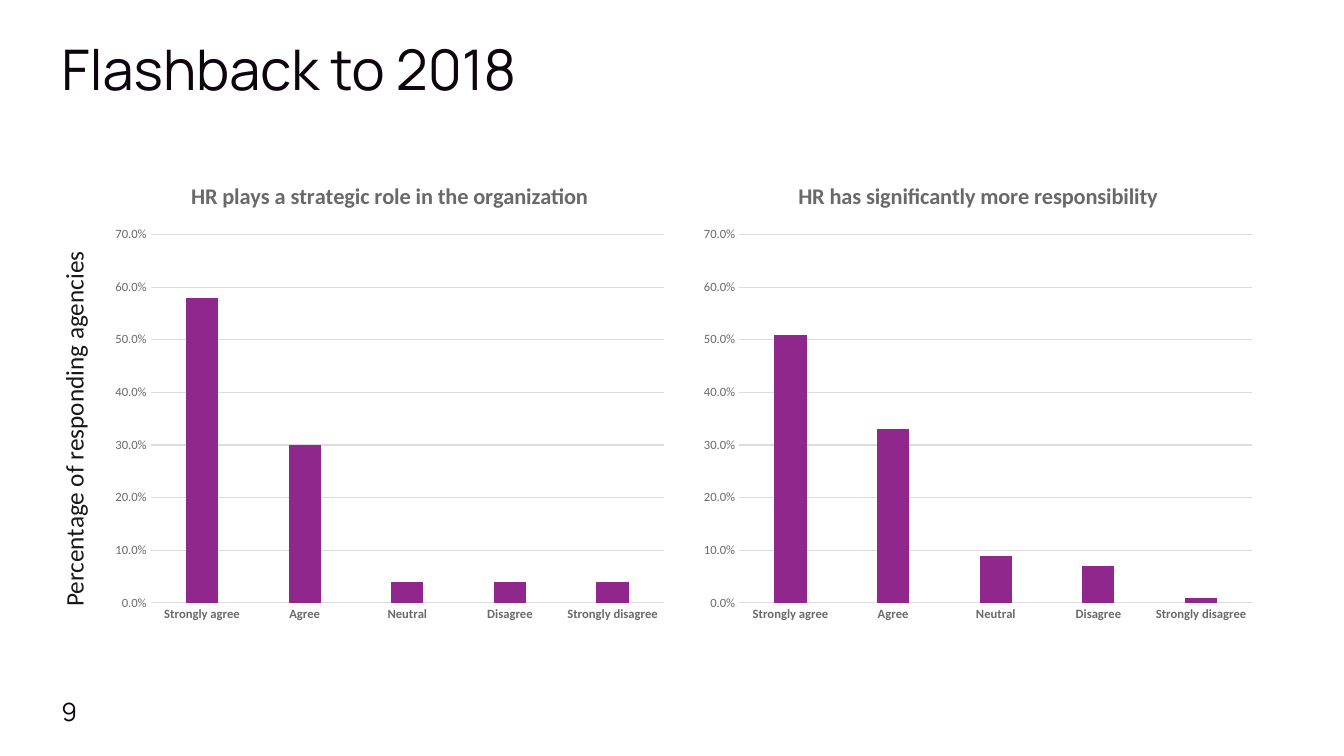
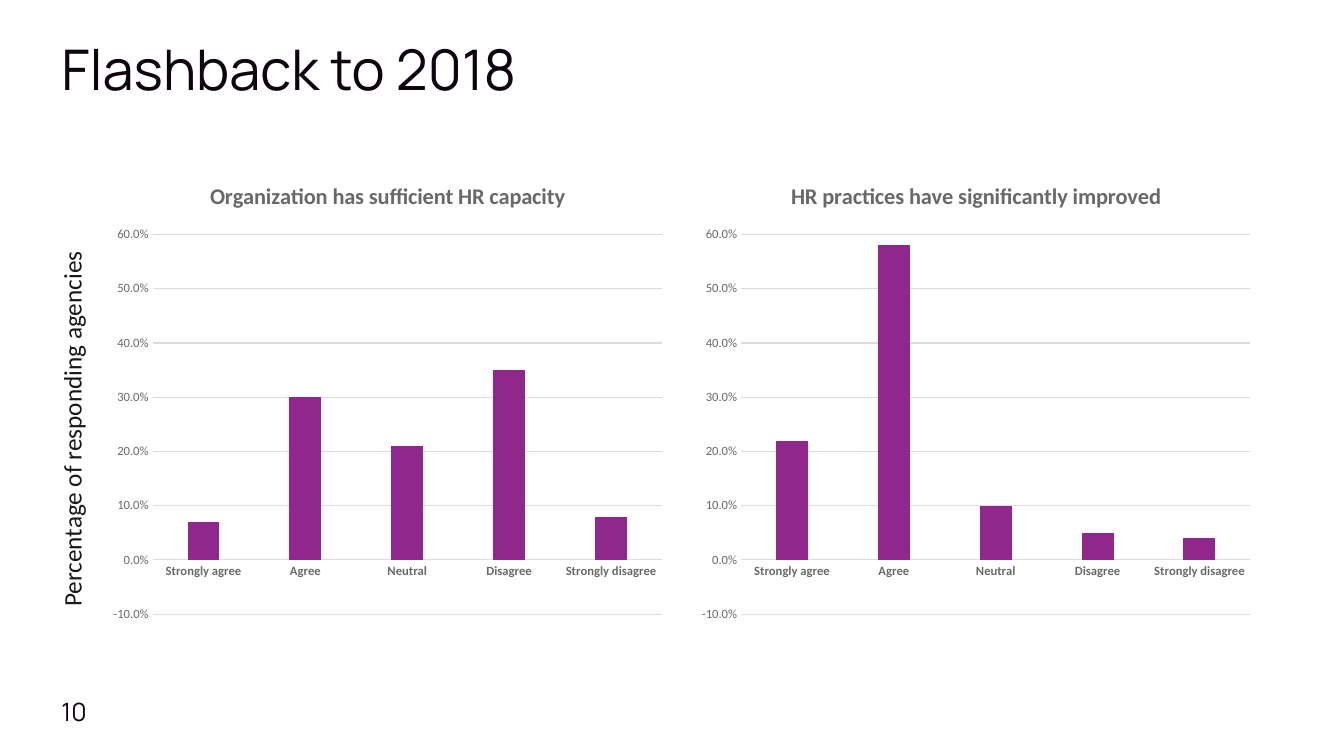
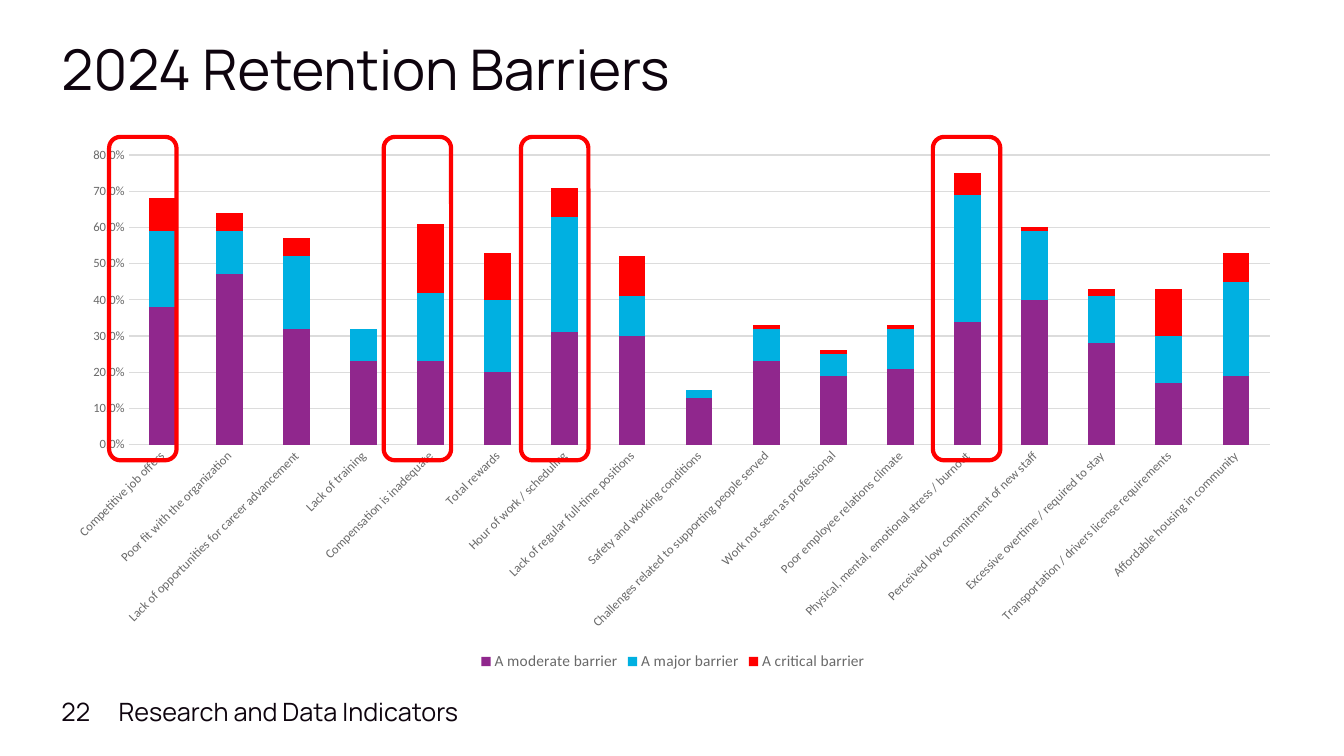
from dataclasses import dataclass

from pptx import Presentation
from pptx.chart.data import CategoryChartData
from pptx.dml.color import RGBColor
from pptx.enum.chart import XL_CHART_TYPE, XL_LEGEND_POSITION, XL_TICK_MARK
from pptx.enum.shapes import MSO_SHAPE
from pptx.enum.text import MSO_ANCHOR, MSO_AUTO_SIZE
from pptx.util import Cm, Pt

CLUSTERED = XL_CHART_TYPE.COLUMN_CLUSTERED
STACKED = XL_CHART_TYPE.COLUMN_STACKED
LEGEND_BOTTOM = XL_LEGEND_POSITION.BOTTOM
NO_TICK = XL_TICK_MARK.NONE
ROUND_RECT = MSO_SHAPE.ROUNDED_RECTANGLE
TOP, MIDDLE = MSO_ANCHOR.TOP, MSO_ANCHOR.MIDDLE
GROW = MSO_AUTO_SIZE.SHAPE_TO_FIT_TEXT


@dataclass(frozen=True)
class Theme:
    head_font: str = "Manrope"
    body_font: str = "Calibri"
    ink: str = "0E040E"
    text: str = "181818"
    muted: str = "696969"
    grid: str = "DCDCDC"
    purple: str = "90278D"
    blue: str = "00B0E1"
    red: str = "FF0000"
    title_size: int = 40
    text_size: int = 18
    chart_title_size: int = 16
    legend_size: int = 11
    chart_size: int = 10
    axis_size: int = 9


T = Theme()

# Box: left, top, width, height in centimetres
SLIDE_W, SLIDE_H = 33.87, 19.05
TITLE_BOX = (1.3, 1.02, 31.32, 1.55)
NUMBER_BOX = (1.3, 17.42, 1.42, 1.02)
FOOTER_BOX = (2.74, 17.42, 9.32, 1.02)
PAIR_BOX_2018 = (1.35, 4.09, 30.5, 11.81)
PAIR_BOX_CAPACITY = (1.3, 4.09, 30.5, 11.81)
BARRIER_BOX = (1.3, 3.45, 31.32, 13.56)

AGREEMENT = ["Strongly agree", "Agree", "Neutral", "Disagree", "Strongly disagree"]
ROLE_CHARTS = [
    ("HR plays a strategic role in the organization", [0.58, 0.3, 0.04, 0.04, 0.04]),
    ("HR has significantly more responsibility", [0.51, 0.33, 0.09, 0.07, 0.01]),
]
CAPACITY_CHARTS = [
    ("Organization has sufficient HR capacity", [0.07, 0.3, 0.21, 0.35, 0.08]),
    ("HR practices have significantly improved", [0.22, 0.58, 0.1, 0.05, 0.04]),
]
BARRIERS = [  # name, moderate, major, critical
    ("Competitive job offers", 0.38, 0.21, 0.09),
    ("Poor fit with the organization", 0.47, 0.12, 0.05),
    ("Lack of opportunities for career advancement", 0.32, 0.2, 0.05),
    ("Lack of training", 0.23, 0.09, 0),
    ("Compensation is inadequate", 0.23, 0.19, 0.19),
    ("Total rewards", 0.2, 0.2, 0.13),
    ("Hour of work / scheduling", 0.31, 0.32, 0.08),
    ("Lack of regular full-time positions", 0.3, 0.11, 0.11),
    ("Safety and working conditions", 0.13, 0.02, 0),
    ("Challenges related to supporting people served", 0.23, 0.09, 0.01),
    ("Work not seen as professional", 0.19, 0.06, 0.01),
    ("Poor employee relations climate", 0.21, 0.11, 0.01),
    ("Physical, mental, emotional stress / burnout", 0.34, 0.35, 0.06),
    ("Perceived low commitment of new staff", 0.4, 0.19, 0.01),
    ("Excessive overtime / required to stay", 0.28, 0.13, 0.02),
    ("Transportation / drivers license requirements", 0.17, 0.13, 0.13),
    ("Affordable housing in community", 0.19, 0.26, 0.08),
]
HIGHLIGHTED = [0, 4, 6, 12]  # barriers that get a frame


def rgb(value):
    return RGBColor.from_string(value)


def lengths(box):
    return [Cm(v) for v in box]


def style_font(font, size, color, name=T.body_font, bold=False):
    font.size = Pt(size)
    font.name = name
    font.bold = bold
    font.color.rgb = rgb(color)


def add_text(s, box, text, size, color, name, anchor=TOP):
    tf = s.shapes.add_textbox(*lengths(box)).text_frame
    tf.word_wrap = True
    tf.vertical_anchor = anchor
    tf.text = text
    style_font(tf.paragraphs[0].runs[0].font, size, color, name)
    return tf


def add_base_slide(prs, title, number, footer=None):
    """Blank slide with the shared title, page number and footer."""
    s = prs.slides.add_slide(prs.slide_layouts[6])
    tf = add_text(s, TITLE_BOX, title, T.title_size, T.ink, T.head_font)
    tf.margin_top = Cm(0.05)
    tf.paragraphs[0].line_spacing = 0.9
    for box, text in ((NUMBER_BOX, str(number)), (FOOTER_BOX, footer)):
        if text:
            add_text(s, box, text, T.text_size, T.ink, T.head_font, MIDDLE)
    return s


def style_axes(chart, low, high, bold):
    cat, val = chart.category_axis, chart.value_axis
    for axis in (cat, val):
        axis.major_tick_mark = axis.minor_tick_mark = NO_TICK
        style_font(axis.tick_labels.font, T.axis_size, T.muted, bold=bold and axis is cat)
    val.minimum_scale, val.maximum_scale, val.major_unit = low, high, 0.1
    val.tick_labels.number_format = "0.0%"
    val.tick_labels.number_format_is_linked = False
    val.has_major_gridlines = True
    val.format.line.fill.background()
    for line in (cat.format.line, val.major_gridlines.format.line):
        line.color.rgb = rgb(T.grid)
        line.width = Pt(0.75)


def add_columns(s, box, kind, cats, series, low, high, gap, overlap, bold=False):
    """Column chart; series holds (name, values, colour) rows."""
    data = CategoryChartData(number_format="0.0%")
    data.categories = cats
    for name, values, _ in series:
        data.add_series(name, values)
    chart = s.shapes.add_chart(kind, *lengths(box), data).chart
    style_font(chart.font, T.chart_size, T.text)
    chart.has_title = chart.has_legend = False
    style_axes(chart, low, high, bold)
    plot = chart.plots[0]
    plot.vary_by_categories = False
    plot.gap_width, plot.overlap = gap, overlap
    for ser, (_, _, color) in zip(plot.series, series):
        ser.invert_if_negative = False
        ser.format.fill.solid()
        ser.format.fill.fore_color.rgb = rgb(color)
    return chart


def add_chart_pair(s, box, charts, low, high):
    """Upright axis label followed by two titled charts of equal width."""
    left, top, width, height = box
    label_w, gap = 1.27, 0.43
    chart_w = (width - label_w - gap) / 2

    # Axis label
    tf = add_text(s, (left, top + 2.13, label_w, 9.32), "Percentage of responding agencies",
                  T.text_size, T.text, T.body_font)
    tf.word_wrap = False
    tf.auto_size = GROW
    tf._txBody.bodyPr.set("vert", "vert270")

    # Charts
    for i, (title, values) in enumerate(charts):
        chart_box = (left + label_w + i * (chart_w + gap), top, chart_w, height)
        chart = add_columns(s, chart_box, CLUSTERED, AGREEMENT, [(title, values, T.purple)],
                            low, high, 219, -27, bold=True)
        tf = chart.chart_title.text_frame
        tf.text = title
        style_font(tf.paragraphs[0].runs[0].font, T.chart_title_size, T.muted, bold=True)
        chart.chart_title.include_in_layout = False


def add_barrier_chart(s, box):
    """Stacked chart with frames around the highlighted barriers."""
    left, top, _, _ = box
    cats, moderate, major, critical = zip(*BARRIERS)
    series = [
        ("A moderate barrier", moderate, T.purple),
        ("A major barrier", major, T.blue),
        ("A critical barrier", critical, T.red),
    ]
    chart = add_columns(s, box, STACKED, cats, series, 0, 0.8, 150, 100)
    chart.category_axis._element.txPr.bodyPr.set("rot", "-2700000")

    # Legend
    chart.has_legend = True
    chart.legend.position = LEGEND_BOTTOM
    chart.legend.include_in_layout = False
    style_font(chart.legend.font, T.legend_size, T.muted)

    # Frames, one category step apart
    for i in HIGHLIGHTED:
        frame_box = (left + 1.45 + i * 1.73, top, 1.7, 8.15)
        frame = s.shapes.add_shape(ROUND_RECT, *lengths(frame_box))
        frame.shadow.inherit = False
        frame.fill.background()
        frame.line.color.rgb = rgb(T.red)
        frame.line.width = Pt(3)


def main():
    prs = Presentation()
    prs.slide_width, prs.slide_height = Cm(SLIDE_W), Cm(SLIDE_H)

    s = add_base_slide(prs, "Flashback to 2018", 9)
    add_chart_pair(s, PAIR_BOX_2018, ROLE_CHARTS, 0, 0.7)

    s = add_base_slide(prs, "Flashback to 2018", 10)
    add_chart_pair(s, PAIR_BOX_CAPACITY, CAPACITY_CHARTS, -0.1, 0.6)

    s = add_base_slide(prs, "2024 Retention Barriers", 22, "Research and Data Indicators")
    add_barrier_chart(s, BARRIER_BOX)

    prs.save("out.pptx")


if __name__ == "__main__":
    main()
